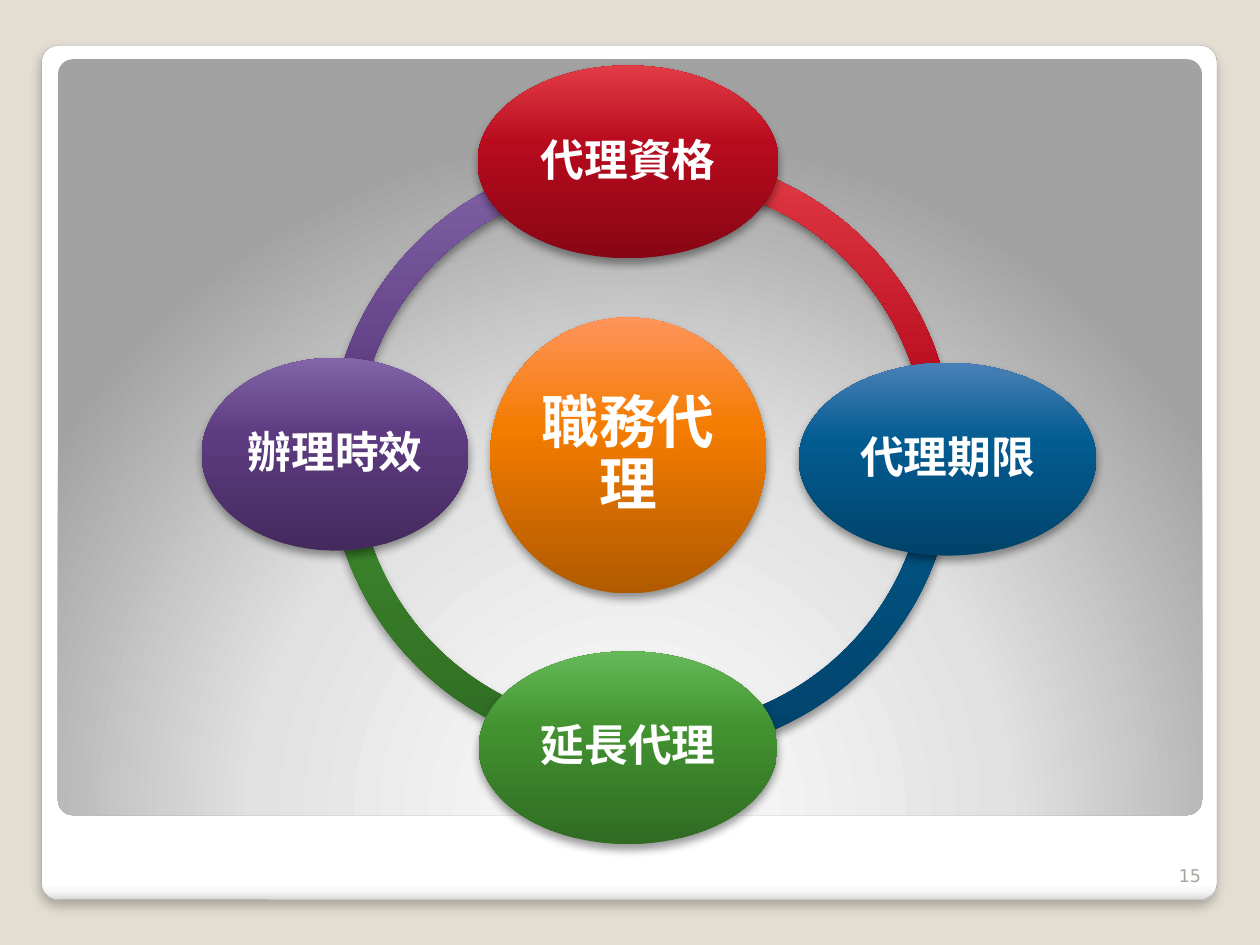
import pptx
import pptx.util
import pptx.oxml
import pptx.oxml.ns
import pptx.dml.color
import pptx.enum.shapes
import pptx.enum.text
from pptx.util import Inches

RGBColor = pptx.dml.color.RGBColor
SHAPE = pptx.enum.shapes.MSO_SHAPE
ALIGN = pptx.enum.text.PP_ALIGN
ANCHOR = pptx.enum.text.MSO_ANCHOR
NAMESPACE = pptx.oxml.ns.nsdecls("a")
FONT = "DejaVu Sans"

WHITE = RGBColor(0xFF, 0xFF, 0xFF)
BEIGE = RGBColor(0xE3, 0xDE, 0xD1)
EDGE_GRAY = RGBColor(0xA4, 0xA4, 0xA4)
NUMBER_GRAY = RGBColor(0xA8, 0xA4, 0x9B)
CARD = [(0, WHITE), (98, WHITE), (99, RGBColor(0xF7, 0xF7, 0xF7)), (100, RGBColor(0xDA, 0xDA, 0xDA))]
PANEL = [(0, WHITE), (55, RGBColor(0xE1, 0xE1, 0xE1)), (100, RGBColor(0xA2, 0xA2, 0xA2))]
PURPLE = [(0, RGBColor(0x44, 0x2A, 0x5E)), (60, RGBColor(0x5E, 0x3B, 0x81)), (100, RGBColor(0x83, 0x64, 0xA8))]
GREEN = [(0, RGBColor(0x2F, 0x6B, 0x22)), (60, RGBColor(0x42, 0x92, 0x30)), (100, RGBColor(0x66, 0xB9, 0x59))]
BLUE = [(0, RGBColor(0x00, 0x43, 0x6A)), (60, RGBColor(0x03, 0x5C, 0x91)), (100, RGBColor(0x4A, 0x80, 0xB7))]
RED = [(0, RGBColor(0x87, 0x06, 0x14)), (60, RGBColor(0xB8, 0x0B, 0x1E)), (100, RGBColor(0xE1, 0x3C, 0x45))]
ORANGE = [(0, RGBColor(0xB0, 0x5A, 0x00)), (60, RGBColor(0xF4, 0x7C, 0x00)), (100, RGBColor(0xFF, 0x94, 0x5C))]

UPWARD = '<a:lin ang="16200000" scaled="0"/>'
DOWNWARD = '<a:lin ang="5400000" scaled="0"/>'
FROM_BELOW = '<a:path path="circle"><a:fillToRect l="50000" t="175000" r="50000" b="-75000"/></a:path>'

deck = pptx.Presentation()
deck.slide_width, deck.slide_height = Inches(10), Inches(7.5)
page = deck.slides.add_slide(deck.slide_layouts[6])
page.background.fill.solid()
page.background.fill.fore_color.rgb = BEIGE


def add_gradient_shape(kind, left, top, width, height, stops, direction=UPWARD, shadow=(40, 5.2, 3)):
    """Add a borderless gradient shape; shadow is opacity %, blur pt, distance pt."""
    shape = page.shapes.add_shape(kind, Inches(left), Inches(top), Inches(width), Inches(height))
    shape.shadow.inherit = False
    shape.line.fill.background()
    shape.fill.background()
    properties = shape.element.spPr
    stop_xml = "".join(
        f'<a:gs pos="{position * 1000}"><a:srgbClr val="{color}"/></a:gs>' for position, color in stops)
    gradient = pptx.oxml.parse_xml(
        f'<a:gradFill {NAMESPACE} rotWithShape="1"><a:gsLst>{stop_xml}</a:gsLst>{direction}</a:gradFill>')
    properties.replace(properties.find(pptx.oxml.ns.qn("a:noFill")), gradient)
    if shadow:
        opacity, blur, distance = shadow
        properties.find(pptx.oxml.ns.qn("a:effectLst")).append(pptx.oxml.parse_xml(
            f'<a:outerShdw {NAMESPACE} blurRad="{pptx.util.Pt(blur)}" dist="{pptx.util.Pt(distance)}" '
            f'dir="5400000" algn="t" rotWithShape="0"><a:srgbClr val="000000">'
            f'<a:alpha val="{opacity * 1000}"/></a:srgbClr></a:outerShdw>'))
    return shape


def write_text(shape, text, size, color, align, bold=False):
    shape.text_frame.word_wrap = True
    shape.text_frame.text = text
    para = shape.text_frame.paragraphs[0]
    para.alignment = align
    font = para.runs[0].font
    font.name, font.size, font.bold = FONT, pptx.util.Pt(size), bold
    font.color.rgb = color


# Card and the panel inside it
card = add_gradient_shape(SHAPE.ROUNDED_RECTANGLE, 0.33, 0.36, 9.33, 6.78, CARD, DOWNWARD, (25, 6, 4))
card.line.color.rgb = EDGE_GRAY
card.line.width = pptx.util.Pt(0.16)
panel = add_gradient_shape(SHAPE.ROUNDED_RECTANGLE, 0.46, 0.47, 9.08, 6, PANEL, FROM_BELOW, None)
for rounded in (card, panel):
    rounded.adjustments[0] = 0.02

# Ring of arcs: left, top, start and end in degrees clockwise from the right
for left, top, start, end, stops in (
    (2.61, 1.23, 180, 270, PURPLE),
    (2.61, 1.23, 90, 180, GREEN),
    (2.82, 1.24, 0.74, 95.15, BLUE),
    (2.82, 1.22, 264.84, 1.2, RED),
):
    arc = add_gradient_shape(SHAPE.BLOCK_ARC, left, top, 4.75, 4.75, stops)
    # One adjustment unit is 100000 / 60000 degrees
    arc.adjustments[0] = start * 0.6
    arc.adjustments[1] = end * 0.6
    arc.adjustments[2] = 0.046

# Hub and the four topics around it
for text, left, top, width, height, size, inset, stops in (
    ("職務代理", 3.89, 2.52, 2.19, 2.19, 33, 0.05, ORANGE),
    ("代理資格", 3.79, 0.52, 2.39, 1.53, 25, 0.03, RED),
    ("代理期限", 6.34, 2.88, 2.36, 1.53, 25, 0.03, BLUE),
    ("延長代理", 3.8, 5.17, 2.37, 1.53, 25, 0.03, GREEN),
    ("辦理時效", 1.6, 2.84, 2.12, 1.53, 25, 0.03, PURPLE),
):
    topic = add_gradient_shape(SHAPE.OVAL, left, top, width, height, stops)
    write_text(topic, text, size, WHITE, ALIGN.CENTER, bold=True)
    frame = topic.text_frame
    frame.vertical_anchor = ANCHOR.MIDDLE
    frame.margin_left = frame.margin_right = frame.margin_top = frame.margin_bottom = Inches(inset)
    frame.paragraphs[0].line_spacing = 0.9

# Page number
number = page.shapes.add_textbox(Inches(9.13), Inches(6.68), Inches(0.5), Inches(0.4))
write_text(number, "15", 10, NUMBER_GRAY, ALIGN.RIGHT)
number.text_frame.vertical_anchor = ANCHOR.BOTTOM

deck.save("out.pptx")
